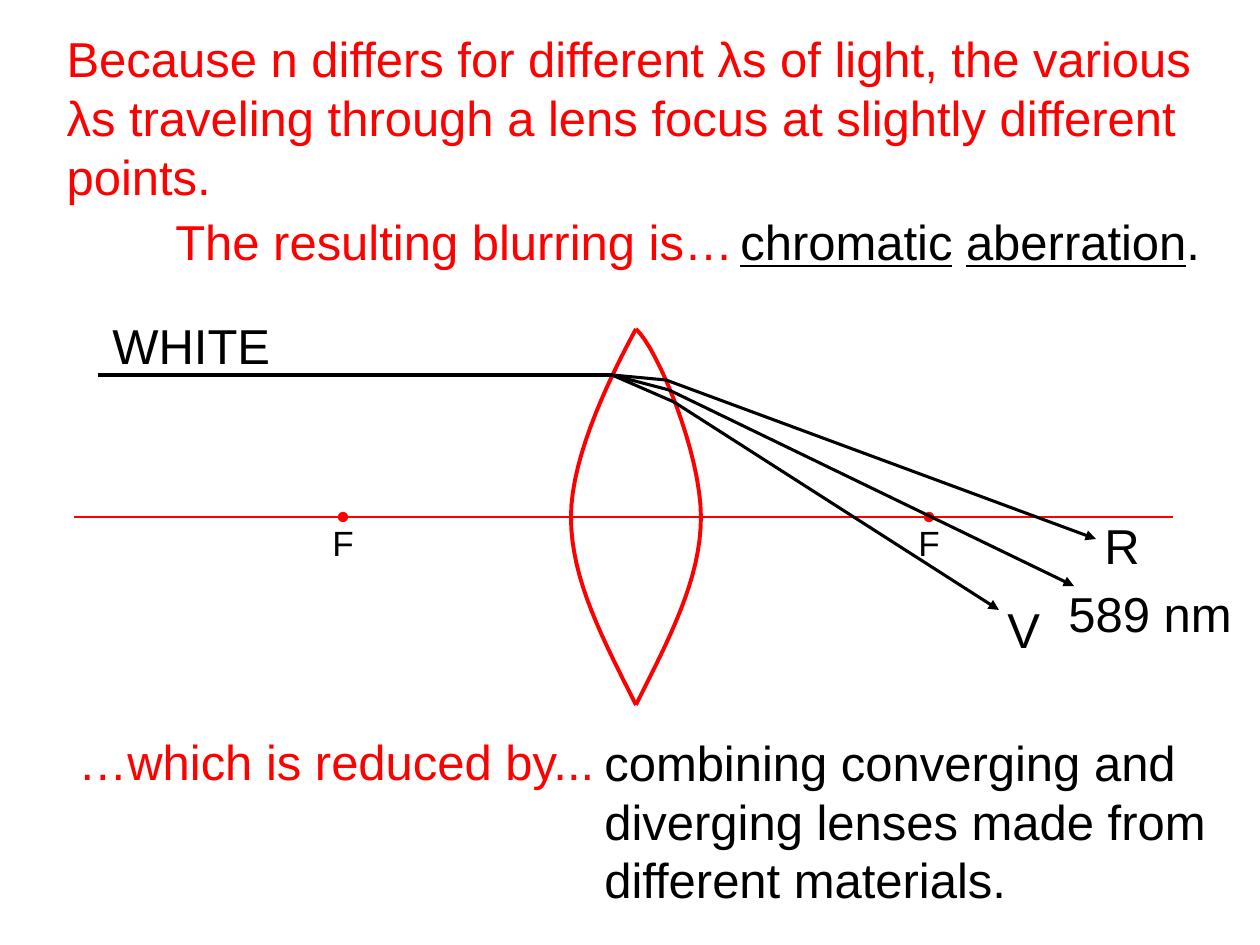
from dataclasses import dataclass

from lxml import etree
from pptx import Presentation
from pptx import util as u
from pptx.dml.color import RGBColor
from pptx.enum import shapes, text
from pptx.oxml import ns

PX = u.Inches(1) / 126


@dataclass(frozen=True)
class Theme:
    font: str = "Arial"
    red: RGBColor = RGBColor(255, 0, 0)
    black: RGBColor = RGBColor(0, 0, 0)
    body: int = 28
    small: int = 20
    lens: float = 2.25
    ray: float = 1.75
    axis: float = 1.25


THEME = Theme()


def emu(*lengths):
    return [round(n * PX) for n in lengths]


def set_all(obj, values):
    for name, value in values.items():
        setattr(obj, name, value)


def fill_text(sp, lines, color, size=THEME.body, indent=0):
    tf = sp.text_frame
    set_all(tf, {"word_wrap": False, "vertical_anchor": text.MSO_ANCHOR.MIDDLE,
                 "auto_size": text.MSO_AUTO_SIZE.SHAPE_TO_FIT_TEXT})
    for i, line in enumerate(lines):
        p = tf.add_paragraph() if i else tf.paragraphs[0]
        p.alignment = text.PP_ALIGN.LEFT
        if indent:
            p._p.get_or_add_pPr().set("indent", str(emu(indent)[0]))
        for words, underline in line:
            r = p.add_run()
            r.text = words
            set_all(r.font, {"name": THEME.font, "size": u.Pt(size),
                             "underline": underline})
            r.font.color.rgb = color


def plain(*lines):
    return [[(line, None)] for line in lines]


def add_text(s, box, lines, color=THEME.black, **style):
    fill_text(s.shapes.add_textbox(*emu(*box)), lines, color, **style)


def add_line(s, start, end, color, width, **ends):
    sp = s.shapes.add_connector(shapes.MSO_CONNECTOR.STRAIGHT,
                                *emu(*start, *end))
    sp.line.color.rgb = color
    sp.line.width = u.Pt(width)
    ln = sp.line._get_or_add_ln()
    for tag, kind in ends.items():
        etree.SubElement(ln, ns.qn(f"a:{tag}"), type=kind)
    etree.SubElement(sp._element.spPr, ns.qn("a:effectLst"))


def bezier(a, b, c, d, steps=16):
    for i in range(1, steps + 1):
        t = i / steps
        weights = ((1 - t) ** 3, 3 * t * (1 - t) ** 2,
                   3 * t ** 2 * (1 - t), t ** 3)
        yield tuple(sum(w * n for w, n in zip(weights, axis))
                    for axis in zip(a, b, c, d))


def add_curve(s, points, color, width):
    start, *rest = points
    dots = [start]
    for i in range(0, len(rest), 3):
        dots += bezier(dots[-1], *rest[i:i + 3])
    builder = s.shapes.build_freeform(*emu(*dots[0]))
    builder.add_line_segments([emu(*dot) for dot in dots[1:]], close=False)
    sp = builder.convert_to_shape()
    sp.shadow.inherit = False
    sp.fill.background()
    sp.line.color.rgb = color
    sp.line.width = u.Pt(width)


def statement(s, box):
    x, y, w, h = box
    title = s.shapes.title
    set_all(title, dict(zip(("left", "top", "width", "height"), emu(*box))))
    fill_text(title, plain(
        "Because n differs for different λs of light, the various",
        "λs traveling through a lens focus at slightly different",
        "points."), THEME.red)
    add_text(s, (x + 109, y + 184, 604, 72),
             plain("The resulting blurring is…"), THEME.red)
    add_text(s, (x + 674, y + 184, 505, 72),
             [[("chromatic", True), (" ", None),
               ("aberration", True), (".", None)]])


def lens_diagram(s, box):
    x, y, w, h = box
    middle, center, focus = h // 2, 562, 293

    def at(dx, dy):
        return x + dx, y + dy

    for side, shoulder in ((-1, (-22, 41)), (1, (22, 20))):
        edge = center + side * 65
        add_curve(s, [at(*point) for point in (
            (center, h), (center + side * 32, 312), (edge, 251),
            (edge, middle), (edge, 125),
            (center + shoulder[0], shoulder[1]), (center, 0))],
            THEME.red, THEME.lens)

    left, right = center - focus, center + focus
    add_line(s, at(left, middle), at(right, middle), THEME.red, THEME.axis,
             headEnd="oval", tailEnd="oval")
    for inner, outer in ((left, 0), (right, w)):
        add_line(s, at(inner, middle), at(outer, middle),
                 THEME.red, THEME.axis)
        add_text(s, (*at(inner - 23, middle - 2), 57, 54), plain("F"),
                 size=THEME.small)

    entry = at(538, 46)
    add_line(s, at(24, 46), entry, THEME.black, THEME.ray)
    add_text(s, (*at(26, -20), 197, 72), plain("WHITE"))

    rays = (
        ("R", (592, 51), (1022, 210), (1018, 180, 74)),
        ("589 nm", (595, 61), (1000, 257), (982, 248, 189)),
        ("V", (600, 73), (925, 281), (921, 264, 72)),
    )
    for name, leave, tip, (tx, ty, tw) in rays:
        add_line(s, entry, at(*leave), THEME.black, THEME.ray)
        add_line(s, at(*leave), at(*tip), THEME.black, THEME.ray,
                 tailEnd="triangle")
        add_text(s, (*at(tx, ty), tw, 72), plain(name))


def remedy(s, box):
    x, y, w, h = box
    add_text(s, (x, y, 548, 72), plain("…which is reduced by..."), THEME.red)
    add_text(s, (x + 488, y + 1, w - 488, h - 1), plain(
        "combining converging and",
        "diverging lenses made from",
        "different materials."), indent=38)


def main():
    prs = Presentation()
    set_all(prs, {"slide_width": u.Inches(10), "slide_height": u.Inches(7.5)})
    s = prs.slides.add_slide(prs.slide_layouts.get_by_name("Title Only"))
    statement(s, (54, 21, 1167, 192))
    lens_diagram(s, (74, 329, 1099, 376))
    remedy(s, (66, 725, 1155, 190))
    prs.save("out.pptx")


if __name__ == "__main__":
    main()
